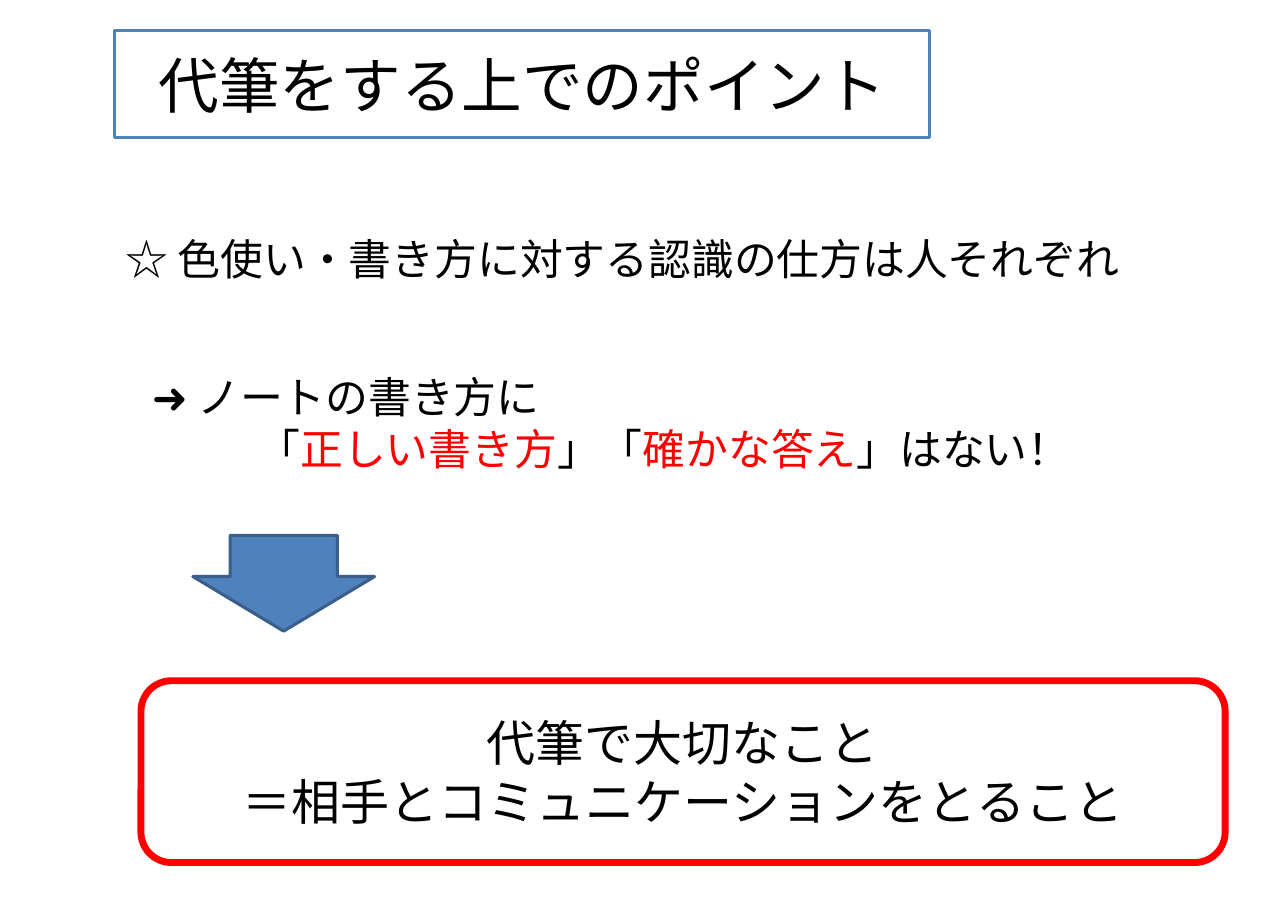
from lxml.etree import SubElement
from pptx import Presentation
from pptx.dml.color import RGBColor
from pptx.enum.shapes import MSO_SHAPE as SHAPE
from pptx.enum.text import MSO_ANCHOR as ANCHOR, PP_ALIGN as ALIGN
from pptx.oxml.ns import qn
from pptx.util import Inches, Pt

# Content: each paragraph is a list of (text, colour) runs
FONT = "Noto Sans CJK JP"
BLACK, RED, WHITE = "000000", "FF0000", "FFFFFF"
BLUE, DARK_BLUE = "4F81BD", "3A5F8C"

TITLE = [[("代筆をする上でのポイント", BLACK)]]
PREMISE = [[("☆ 色使い・書き方に対する認識の仕方は人それぞれ", BLACK)]]
NO_RIGHT_ANSWER = [
    [("➜ ノートの書き方に", BLACK)],
    [("「", BLACK), ("正しい書き方", RED), ("」「", BLACK),
     ("確かな答え", RED), ("」はない！", BLACK)],
]
CONCLUSION = [
    [("代筆で大切なこと", BLACK)],
    [("＝相手とコミュニケーションをとること", BLACK)],
]
QUOTE_INDENT = 0.96


def rgb(color):
    return RGBColor.from_string(color)


def write(shape, paragraphs, size, align=ALIGN.LEFT, anchor=ANCHOR.TOP):
    tf = shape.text_frame
    tf.word_wrap = True
    tf.vertical_anchor = anchor
    for i, runs in enumerate(paragraphs):
        p = tf.add_paragraph() if i else tf.paragraphs[0]
        p.alignment = align
        for text, color in runs:
            r = p.add_run()
            r.text = text
            r.font.size = Pt(size)
            r.font.color.rgb = rgb(color)
            r.font.name = FONT
            # East Asian typeface for the Japanese text
            SubElement(r.font._element, qn("a:ea"), typeface=FONT)
    return tf


def add_box(s, kind, at, line, width, fill=None):
    sp = s.shapes.add_shape(kind, *map(Inches, at))
    sp.shadow.inherit = False
    if fill:
        sp.fill.solid()
        sp.fill.fore_color.rgb = rgb(fill)
    else:
        sp.fill.background()
    sp.line.color.rgb = rgb(line)
    sp.line.width = Pt(width)
    return sp


def add_text(s, at, paragraphs):
    return write(s.shapes.add_textbox(*map(Inches, at)), paragraphs, 28)


def main():
    prs = Presentation()
    prs.slide_width, prs.slide_height = Inches(11.69), Inches(8.27)
    s = prs.slides.add_slide(prs.slide_layouts[6])

    # Title
    title = add_box(s, SHAPE.RECTANGLE, (1.04, 0.28, 7.4, 0.97), BLUE, 2, WHITE)
    write(title, TITLE, 39.6, ALIGN.CENTER, ANCHOR.MIDDLE)

    # Points, with the quoted line indented
    add_text(s, (1.04, 2.06, 10, 0.57), PREMISE)
    tf = add_text(s, (1.28, 3.32, 10.41, 1.04), NO_RIGHT_ANSWER)
    pPr = tf.paragraphs[1]._p.get_or_add_pPr()
    pPr.set("marL", str(Inches(QUOTE_INDENT)))
    pPr.set("indent", "0")

    # Arrow to the conclusion
    arrow = add_box(s, SHAPE.DOWN_ARROW, (1.75, 4.86, 1.65, 0.87),
                    DARK_BLUE, 2, BLUE)
    arrow.adjustments[0] = 0.59
    arrow.adjustments[1] = 0.57

    # Conclusion
    conclusion = add_box(s, SHAPE.ROUNDED_RECTANGLE, (1.28, 6.18, 9.84, 1.65),
                         RED, 4.5)
    write(conclusion, CONCLUSION, 32, ALIGN.CENTER, ANCHOR.MIDDLE)

    prs.save("out.pptx")


if __name__ == "__main__":
    main()
